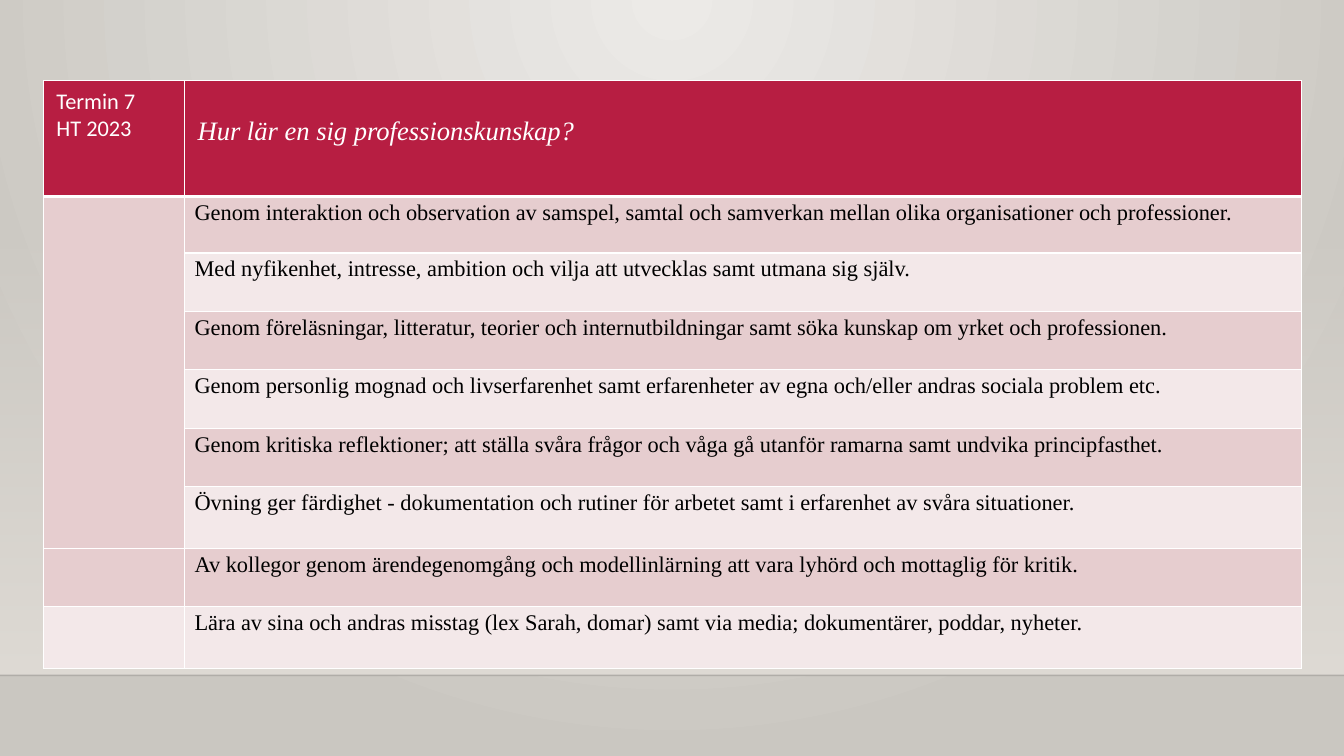
"""Build the Termin 7 slide: a table of ways to learn professional knowledge."""
from pptx import Presentation
from pptx.dml.color import RGBColor
from pptx.enum.shapes import MSO_CONNECTOR, MSO_SHAPE
from pptx.oxml import parse_xml
from pptx.oxml.ns import nsdecls, qn
from pptx.util import Inches, Pt

STRAIGHT = MSO_CONNECTOR.STRAIGHT
RECTANGLE = MSO_SHAPE.RECTANGLE
CRIMSON = RGBColor(0xB7, 0x1E, 0x42)
ROSE = RGBColor(0xE6, 0xCD, 0xCF)
PALE_ROSE = RGBColor(0xF3, 0xE8, 0xE9)
WHITE = RGBColor(0xFF, 0xFF, 0xFF)
BLACK = RGBColor(0x00, 0x00, 0x00)
LIGHT_STONE = RGBColor(0xEC, 0xEA, 0xE7)
DARK_STONE = RGBColor(0xCA, 0xC7, 0xC1)
WALL = RGBColor(0xDF, 0xDB, 0xD5)

HEADER_LABEL = ["Termin 7", "HT 2023"]
QUESTION = "Hur lär en sig professionskunskap?"
ANSWERS = [
    "Genom interaktion och observation av samspel, samtal och samverkan mellan olika organisationer och professioner.",
    "Med nyfikenhet, intresse, ambition och vilja att utvecklas samt utmana sig själv.",
    "Genom föreläsningar, litteratur, teorier och internutbildningar samt söka kunskap om yrket och professionen.",
    "Genom personlig mognad och livserfarenhet samt erfarenheter av egna och/eller andras sociala problem etc.",
    "Genom kritiska reflektioner; att ställa svåra frågor och våga gå utanför ramarna samt undvika principfasthet.",
    "Övning ger färdighet - dokumentation och rutiner för arbetet samt i erfarenhet av svåra situationer.",
    "Av kollegor genom ärendegenomgång och modellinlärning att vara lyhörd och mottaglig för kritik.",
    "Lära av sina och andras misstag (lex Sarah, domar) samt via media; dokumentärer, poddar, nyheter.",
]
COLUMN_WIDTHS = [1.4, 11.08]
ROW_HEIGHTS = [1.15, 0.56, 0.58, 0.58, 0.58, 0.58, 0.61, 0.58, 0.61]


def replace_with_gradient(properties, start, start_alpha, end, direction):
    """Swap the solid fill of a properties element for a two-stop gradient."""
    gradient = parse_xml(
        f'<a:gradFill {nsdecls("a")} rotWithShape="1"><a:gsLst>'
        f'<a:gs pos="0"><a:srgbClr val="{start}"><a:alpha val="{start_alpha}"/></a:srgbClr></a:gs>'
        f'<a:gs pos="100000"><a:srgbClr val="{end}"/></a:gs>'
        f'</a:gsLst>{direction}</a:gradFill>')
    properties.replace(properties.find(qn("a:solidFill")), gradient)


def style_cell(cell, color, bottom_width):
    """Fill a cell and give it white borders."""
    cell.fill.solid()
    cell.fill.fore_color.rgb = color
    sides = [("lnL", 1), ("lnR", 1), ("lnT", 1), ("lnB", bottom_width)]
    for position, (side, width) in enumerate(sides):
        border = parse_xml(
            f'<a:{side} {nsdecls("a")} w="{Pt(width)}"><a:solidFill>'
            f'<a:srgbClr val="{WHITE}"/></a:solidFill></a:{side}>')
        cell._tc.tcPr.insert(position, border)


presentation = Presentation()
presentation.slide_width = Inches(13.33)
presentation.slide_height = Inches(7.5)
slide = presentation.slides.add_slide(presentation.slide_layouts[6])

slide.background.fill.solid()
replace_with_gradient(
    slide.element.find(".//" + qn("p:bgPr")), LIGHT_STONE, 100000, DARK_STONE,
    '<a:path path="circle"><a:fillToRect l="43000" r="43000" b="100000"/></a:path>')

wall = slide.shapes.add_shape(RECTANGLE, 0, Inches(2.21), Inches(13.33), Inches(4.49))
wall.shadow.inherit = False
wall.line.fill.background()
wall.fill.solid()
replace_with_gradient(wall.element.spPr, WALL, 0, WALL, '<a:lin ang="5400000" scaled="0"/>')

floor_line = slide.shapes.add_connector(STRAIGHT, 0, Inches(6.7), Inches(13.33), Inches(6.7))
floor_line.line.width = Pt(1)
floor_line.line.color.rgb = BLACK
floor_color = floor_line.element.spPr.find(".//" + qn("a:srgbClr"))
floor_color.append(parse_xml(f'<a:alpha {nsdecls("a")} val="20000"/>'))
floor_line.element.spPr.append(parse_xml(f'<a:effectLst {nsdecls("a")}/>'))

table = slide.shapes.add_table(
    len(ROW_HEIGHTS), len(COLUMN_WIDTHS), Inches(0.43), Inches(0.8),
    Inches(sum(COLUMN_WIDTHS)), Inches(sum(ROW_HEIGHTS))).table
for column, width in zip(table.columns, COLUMN_WIDTHS):
    column.width = Inches(width)
for row_index, (row, height) in enumerate(zip(table.rows, ROW_HEIGHTS)):
    row.height = Inches(height)
    for cell in row.cells:
        if row_index == 0:
            style_cell(cell, CRIMSON, 3)
        else:
            style_cell(cell, ROSE if row_index % 2 else PALE_ROSE, 1)
table.cell(1, 0).merge(table.cell(6, 0))

label_cell, question_cell = table.rows[0].cells
label_cell.text = "\n".join(HEADER_LABEL)
question_cell.text = QUESTION
for cell, margin_top, font_name, size in [
        (label_cell, 0.07, "Calibri", 16), (question_cell, 0.36, "Times New Roman", 19)]:
    cell.margin_left = cell.margin_right = Inches(0.13)
    cell.margin_top = Inches(margin_top)
    cell.margin_bottom = Inches(0.07)
    for paragraph in cell.text_frame.paragraphs:
        paragraph.font.name = font_name
        paragraph.font.size = Pt(size)
        paragraph.font.bold = False
        paragraph.font.italic = cell is question_cell
        paragraph.font.color.rgb = WHITE

for row_index, answer in enumerate(ANSWERS, start=1):
    cell = table.cell(row_index, 1)
    cell.text = answer
    cell.margin_left = cell.margin_right = Inches(0.1)
    cell.margin_top = cell.margin_bottom = 0
    paragraph = cell.text_frame.paragraphs[0]
    paragraph.line_spacing = 1.15
    paragraph.space_after = Pt(8)
    paragraph.font.name = "Times New Roman"
    paragraph.font.size = Pt(16)
    paragraph.font.color.rgb = BLACK

presentation.save("out.pptx")
